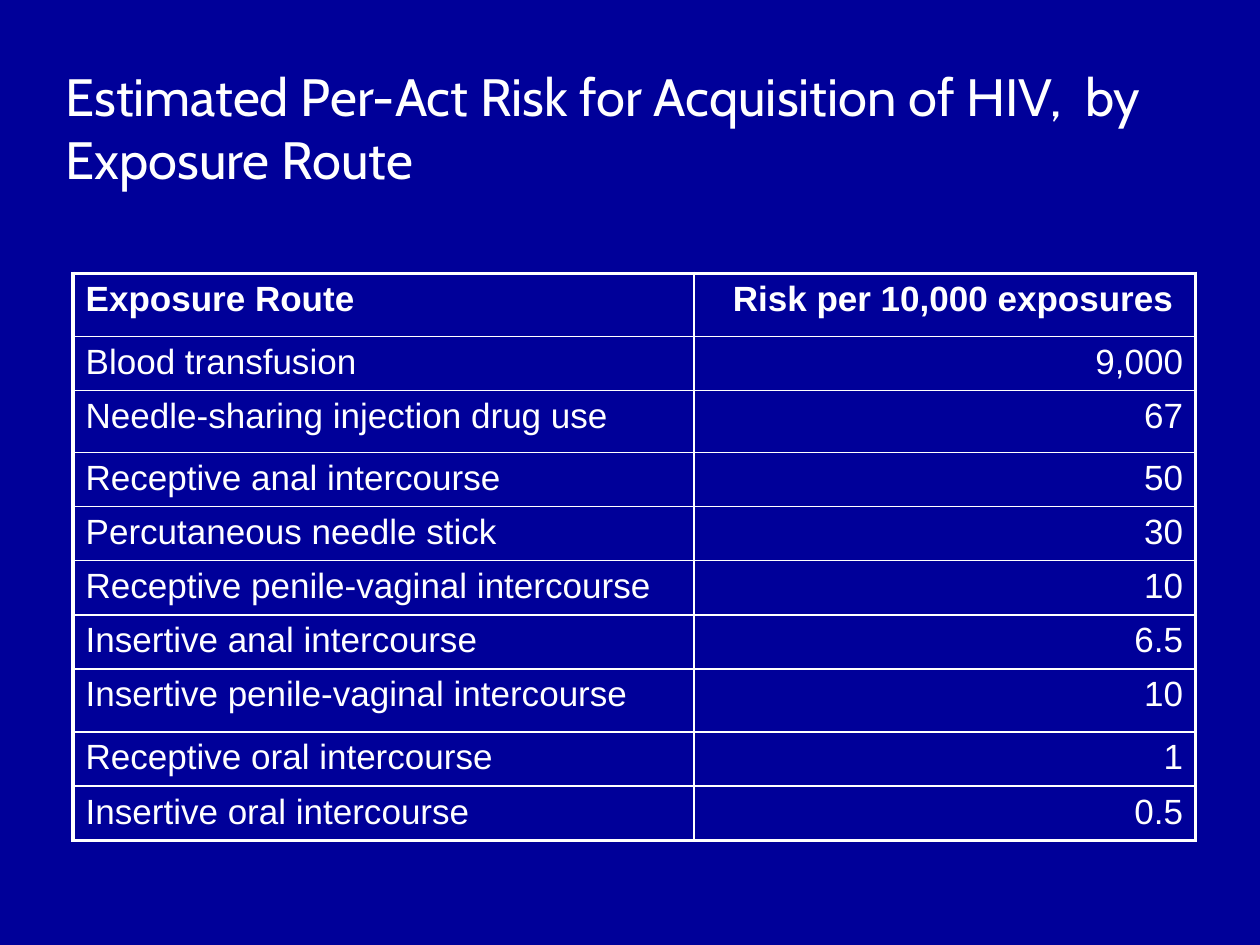
from dataclasses import dataclass

from lxml.etree import SubElement as Sub
from pptx import Presentation
from pptx.dml.color import RGBColor as Rgb
from pptx.enum.text import MSO_ANCHOR as Anchor, PP_ALIGN as Align
from pptx.oxml.ns import qn
from pptx.util import Inches, Pt

ROWS = [
    ("Exposure Route", "Risk per 10,000 exposures "),
    ("Blood transfusion", "9,000"),
    ("Needle-sharing injection drug use", "67"),
    ("Receptive anal intercourse", "50"),
    ("Percutaneous needle stick", "30"),
    ("Receptive penile-vaginal intercourse", "10"),
    ("Insertive anal intercourse", "6.5"),
    ("Insertive penile-vaginal intercourse", "10"),
    ("Receptive oral intercourse", "1"),
    ("Insertive oral intercourse", "0.5"),
]
WIDTHS = (4.93, 3.98)
TALL = {0: 0.5, 2: 0.49, 7: 0.5}
HEIGHT = 0.43


@dataclass(frozen=True)
class Theme:
    back: str = "000099"
    ink: str = "FFFFFF"
    head: str = "Cabin"
    body: str = "Arial"
    big: int = 30
    small: int = 20
    thick: float = 2.25
    thin: float = 1


class Deck:
    """Holds the theme and the current slide."""

    def __init__(self, theme):
        self.theme = theme
        self.prs = Presentation()
        self.prs.slide_width, self.prs.slide_height = Inches(10), Inches(7.5)
        self.slide = self.prs.slides.add_slide(self.prs.slide_layouts[5])
        fill = self.slide.background.fill
        fill.solid()
        fill.fore_color.rgb = Rgb.from_string(theme.back)

    def label(self, frame, text, align, **form):
        frame.text = text
        para = frame.paragraphs[0]
        para.alignment = align
        font = para.runs[0].font
        for key, value in form.items():
            setattr(font, key, value)
        font.color.rgb = Rgb.from_string(self.theme.ink)

    def title(self, text, left, top, width, height):
        shape = self.slide.shapes.title
        place = dict(left=left, top=top, width=width, height=height)
        for key, value in place.items():
            setattr(shape, key, Inches(value))
        frame = shape.text_frame
        frame.vertical_anchor = Anchor.MIDDLE
        self.label(frame, text, Align.LEFT,
                   name=self.theme.head, size=Pt(self.theme.big))

    def edge(self, cell, outer):
        """Draw all four borders, thick on the sides named in outer."""
        props = cell._tc.get_or_add_tcPr()
        for spot, side in enumerate("LRTB"):
            size = self.theme.thick if side in outer else self.theme.thin
            line = Sub(props, qn(f"a:ln{side}"), w=str(Pt(size)))
            Sub(Sub(line, qn("a:solidFill")), qn("a:srgbClr"),
                val=self.theme.ink)
            props.insert(spot, line)

    def table(self, rows, widths, heights, left, top):
        size = (left, top, sum(widths), sum(heights))
        grid = self.slide.shapes.add_table(
            len(rows), len(widths), *map(Inches, size)).table
        grid.first_row = grid.horz_banding = False
        for col, width in zip(grid.columns, widths):
            col.width = Inches(width)
        for row, height in zip(grid.rows, heights):
            row.height = Inches(height)
        for r, texts in enumerate(rows):
            for c, text in enumerate(texts):
                cell = grid.cell(r, c)
                cell.fill.background()
                self.label(cell.text_frame, text,
                           Align.RIGHT if c else Align.LEFT,
                           name=self.theme.body, size=Pt(self.theme.small),
                           bold=r == 0)
                outer = "R" if c else "L"
                if r == 0:
                    outer += "T"
                if r == len(rows) - 1:
                    outer += "B"
                self.edge(cell, outer)


def main():
    deck = Deck(Theme())
    deck.title("Estimated Per-Act Risk for Acquisition of HIV,  by Exposure Route",
               0.42, 0.42, 9.17, 1.17)
    heights = [TALL.get(r, HEIGHT) for r in range(len(ROWS))]
    deck.table(ROWS, WIDTHS, heights, 0.58, 2.17)
    deck.prs.save("out.pptx")


if __name__ == "__main__":
    main()
